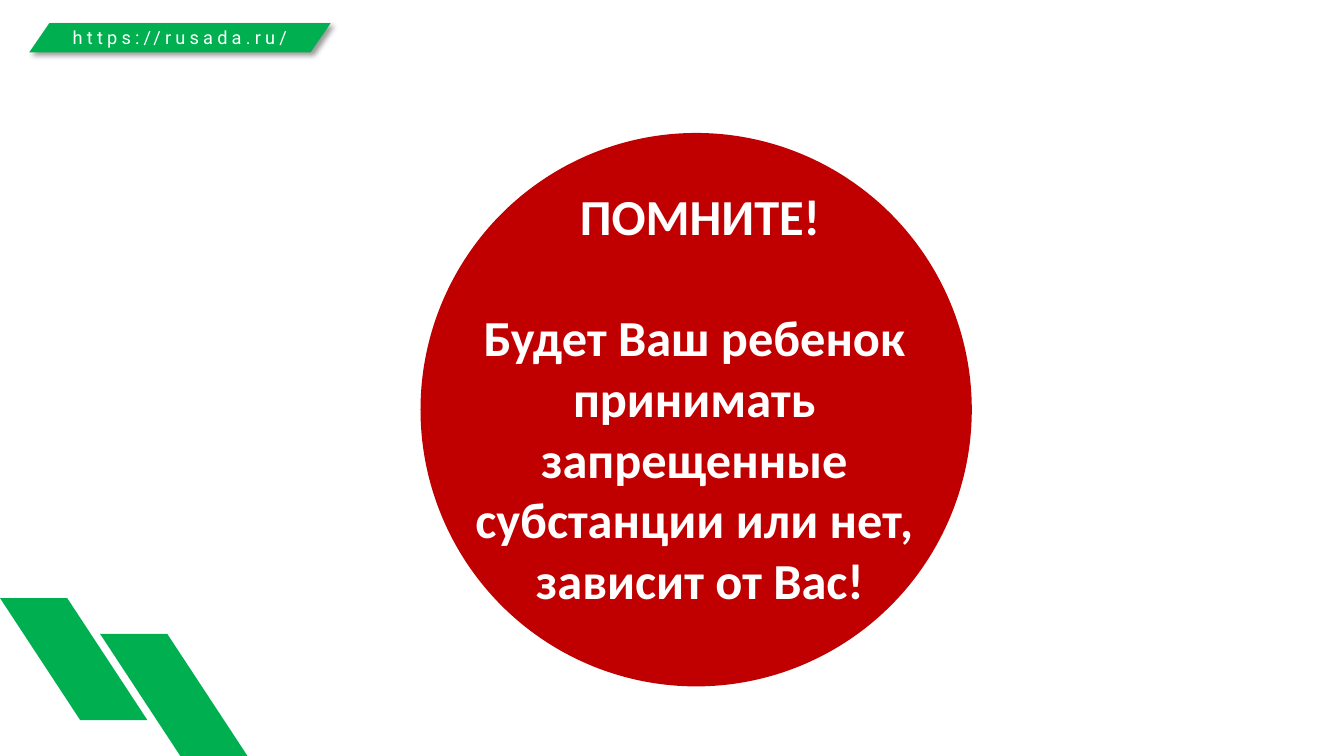
"""Build the closing reminder slide with a red circle and green slanted accents."""
from dataclasses import dataclass

from lxml import etree
from pptx import Presentation
from pptx.dml.color import RGBColor
from pptx.enum import shapes, text
from pptx.oxml import ns
from pptx.util import Pt


@dataclass(frozen=True)
class Theme:
    green: RGBColor = RGBColor(0x00, 0xB0, 0x50)
    red: RGBColor = RGBColor(0xC0, 0x00, 0x00)
    white: RGBColor = RGBColor(0xFF, 0xFF, 0xFF)
    address_size: float = 13
    reminder_size: float = 36
    reminder_leading: float = 43.3


@dataclass(frozen=True)
class Slant:
    left: float
    top: float
    edge: float
    height: float
    lean: float
    shadowed: bool = False


@dataclass(frozen=True)
class Caption:
    left: float
    top: float
    width: float
    height: float
    lines: tuple[str, ...]
    font: str
    size: float
    bold: bool = False


THEME = Theme()
SLANTS = (
    Slant(71.5, 452.8, 48, 87.2, 57.3),
    Slant(0, 427.2, 48, 87.2, 57.3),
    Slant(35.3, 16.5, 200.9, 20.9, -14.4, shadowed=True),
)
ADDRESS = Caption(48.2, 16.5, 160.6, 20.2, ("https://rusada.ru/",), "Roboto", THEME.address_size)
REMINDER = Caption(
    243.4, 140.4, 506.9, 286.6,
    (
        "ПОМНИТЕ!",
        "Будет Ваш ребенок ",
        "принимать ",
        "запрещенные ",
        "субстанции или нет, ",
        "зависит от Вас!",
    ),
    "Calibri", THEME.reminder_size, bold=True,
)


def paint(shape, color: RGBColor) -> None:
    """Give a shape a flat fill with no line or shadow."""
    shape.fill.solid()
    shape.fill.fore_color.rgb = color
    shape.line.fill.background()
    shape.shadow.inherit = False


def add_shadow(shape) -> None:
    """Add a soft shadow towards the lower right."""
    effects = shape._element.spPr.find(ns.qn("a:effectLst"))
    shadow = etree.SubElement(
        effects, ns.qn("a:outerShdw"),
        blurRad=str(Pt(4)), dist=str(Pt(3)), dir="2700000", algn="tl", rotWithShape="0",
    )
    black = etree.SubElement(shadow, ns.qn("a:srgbClr"), val="000000")
    etree.SubElement(black, ns.qn("a:alpha"), val="40000")


def draw_slant(slide, slant: Slant) -> None:
    """Draw a parallelogram whose lower edge is shifted by its lean."""
    right, bottom = slant.left + slant.edge, slant.top + slant.height
    corners = (
        (right, slant.top),
        (right + slant.lean, bottom),
        (slant.left + slant.lean, bottom),
    )
    outline = slide.shapes.build_freeform(Pt(slant.left), Pt(slant.top))
    outline.add_line_segments([(Pt(x), Pt(y)) for x, y in corners], close=True)
    accent = outline.convert_to_shape()
    paint(accent, THEME.green)
    if slant.shadowed:
        add_shadow(accent)


def draw_caption(slide, caption: Caption):
    """Draw centred white lines and return their text frame."""
    box = slide.shapes.add_textbox(
        Pt(caption.left), Pt(caption.top), Pt(caption.width), Pt(caption.height)
    )
    frame = box.text_frame
    frame.word_wrap = True
    frame.vertical_anchor = text.MSO_ANCHOR.MIDDLE
    frame.text = "\n".join(caption.lines)
    for line in frame.paragraphs:
        line.alignment = text.PP_ALIGN.CENTER
        line.font.name = caption.font
        line.font.size = Pt(caption.size)
        line.font.bold = caption.bold
        line.font.color.rgb = THEME.white
    return frame


def draw_address(slide) -> None:
    """Draw the widely spaced web address on the banner."""
    frame = draw_caption(slide, ADDRESS)
    frame.margin_left = frame.margin_right = Pt(3.6)
    for run in frame.paragraphs[0].runs:
        run._r.get_or_add_rPr().set("spc", "300")


def draw_reminder(slide) -> None:
    """Draw the red circle and the reminder over it."""
    circle = slide.shapes.add_shape(
        shapes.MSO_SHAPE.OVAL, Pt(300.4), Pt(95), Pt(393.8), Pt(395.3)
    )
    paint(circle, THEME.red)
    lines = draw_caption(slide, REMINDER).paragraphs
    for line in lines:
        line.line_spacing = Pt(THEME.reminder_leading)
        line._p.get_or_add_pPr().set("marL", str(Pt(6.5)))
    lines[1].space_before = Pt(THEME.reminder_leading)


def main() -> None:
    """Build and save the slide."""
    deck = Presentation()
    deck.slide_width, deck.slide_height = Pt(960), Pt(540)
    slide = deck.slides.add_slide(deck.slide_layouts[6])
    for slant in SLANTS:
        draw_slant(slide, slant)
    draw_address(slide)
    draw_reminder(slide)
    deck.save("out.pptx")


if __name__ == "__main__":
    main()
